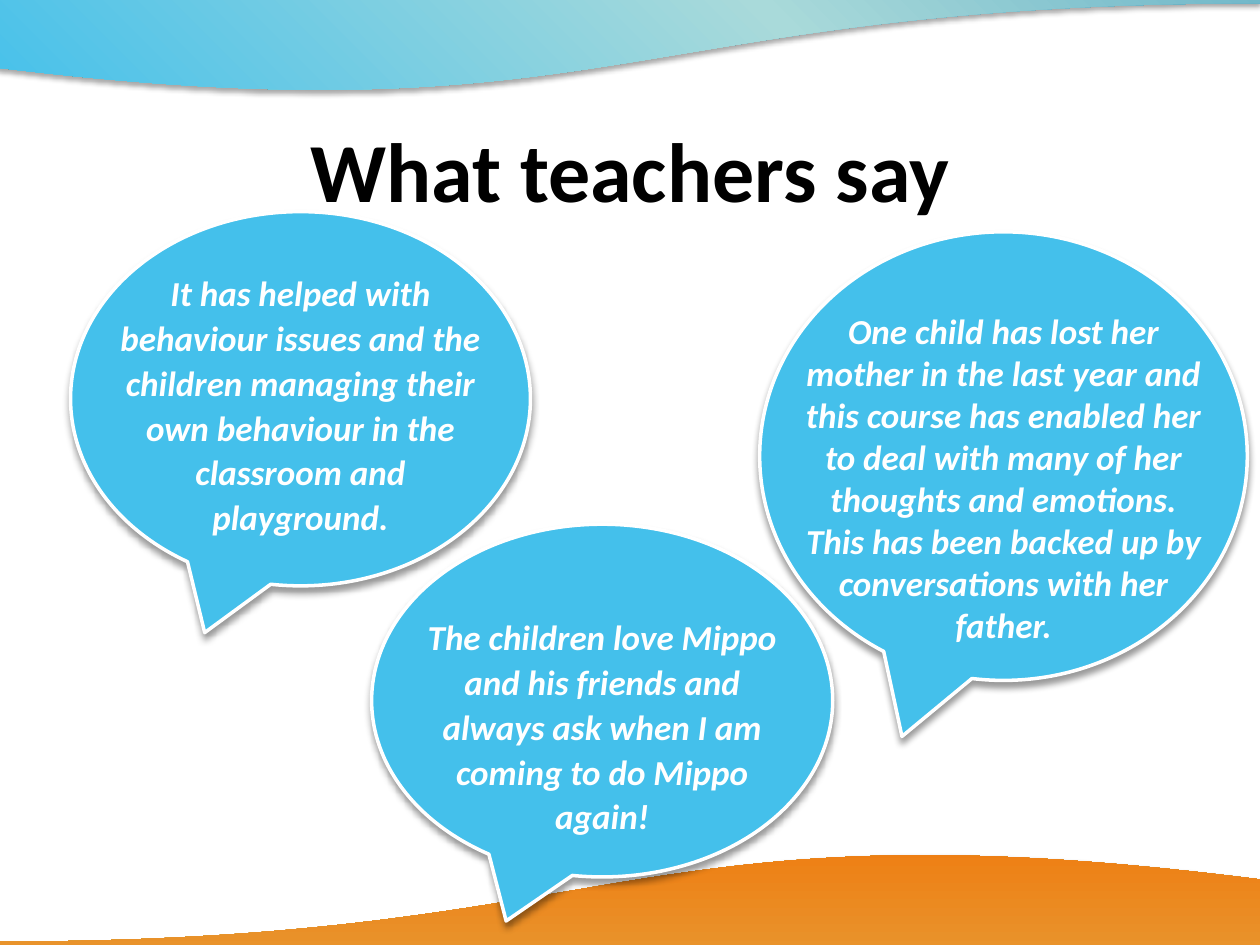
"""Build a slide of teacher quotes in speech bubbles between two waves."""
from pptx import Presentation
from pptx.dml.color import RGBColor
from pptx.enum.shapes import MSO_SHAPE
from pptx.enum.text import MSO_ANCHOR, PP_ALIGN
from pptx.oxml import parse_xml
from pptx.oxml.ns import nsdecls
from pptx.util import Inches, Pt

WIDTH, HEIGHT = Inches(10), Inches(7.5)

THEME = {
    "bubble": "44C0EB",
    "outline": "FFFFFF",
    "outline_width": 2,
    "title": {"name": "Calibri", "size": Pt(48), "bold": True},
    "quote": {"name": "Calibri", "size": Pt(20), "bold": True, "italic": True},
    "title_color": "000000",
    "quote_color": "FFFFFF",
    "wave_shadow": {"alpha": 35, "blur": 3.1, "dist": 1.8},
    "bubble_shadow": {"alpha": 40, "blur": 4, "dist": 3},
}

TITLE = {"text": "What teachers say", "box": (5, 11.6, 90, 12.53)}

WAVES = [
    {"box": (-2, -39.2, 102, 49.33), "angle": 135, "flip": False,
     "colors": ("499FBD", "A9DADA", "44C0EB")},
    {"box": (0, 89.87, 100.4, 49.33), "angle": 90, "flip": True,
     "colors": ("D66D08", "E1AF4C", "EE7F14")},
]

LOOSE = {"line_spacing": 1.07, "space_after": Pt(6)}
QUOTES = [
    {"box": (60.3, 24.53, 38.7, 47.47), "text_box": (34.1, 32.13, 37.2), "format": {},
     "text": "One child has lost her mother in the last year and this course has "
             "enabled her to deal with many of her thoughts and emotions. This has "
             "been backed up by conversations with her father."},
    {"box": (29.5, 55.47, 36.6, 37.33), "text_box": (31.7, 64.13, 25.2), "format": LOOSE,
     "text": "The children love Mippo and his friends and always ask when I am "
             "coming to do Mippo again!"},
    {"box": (5.6, 22.4, 36.5, 39.6), "text_box": (31.3, 27.73, 30), "format": LOOSE,
     "text": "It has helped with behaviour issues and the children managing their "
             "own behaviour in the classroom and playground."},
]


def place(box):
    """Turn percentages of the slide into lengths."""
    return [int(share * side / 100) for share, side in zip(box, (WIDTH, HEIGHT) * 2)]


def set_all(target, values):
    """Set every attribute named in a dict."""
    for name, value in values.items():
        setattr(target, name, value)


def add_shadow(sp, alpha, blur, dist):
    """Give a shape a soft shadow falling straight down."""
    sp.shadow.inherit = False
    sp._element.spPr.find("{*}effectLst").append(parse_xml(
        f'<a:outerShdw {nsdecls("a")} blurRad="{Pt(blur)}" dist="{Pt(dist)}" '
        f'dir="5400000" rotWithShape="0"><a:srgbClr val="000000">'
        f'<a:alpha val="{alpha * 1000}"/></a:srgbClr></a:outerShdw>'))


def add_wave(shapes, wave):
    """Add a wave with an evenly stepped gradient."""
    sp = shapes.add_shape(MSO_SHAPE.FLOWCHART_DOCUMENT, *place(wave["box"]))
    sp.line.fill.background()
    step = 100000 // (len(wave["colors"]) - 1)
    stops = "".join(f'<a:gs pos="{i * step}"><a:srgbClr val="{color}"/></a:gs>'
                    for i, color in enumerate(wave["colors"]))
    spPr = sp._element.spPr
    spPr.find("{*}ln").addprevious(parse_xml(
        f'<a:gradFill {nsdecls("a")} rotWithShape="1"><a:gsLst>{stops}</a:gsLst>'
        f'<a:lin ang="{wave["angle"] * 60000}" scaled="0"/></a:gradFill>'))
    if wave["flip"]:
        for side in ("flipH", "flipV"):
            spPr.find("{*}xfrm").set(side, "1")
    add_shadow(sp, **THEME["wave_shadow"])


def add_text(shapes, box, text, style, anchor, paragraph_format):
    """Add a centred text box in one of the theme's styles."""
    tf = shapes.add_textbox(*place(box)).text_frame
    set_all(tf, {"word_wrap": True, "vertical_anchor": anchor})
    p = tf.paragraphs[0]
    set_all(p, {"alignment": PP_ALIGN.CENTER, **paragraph_format})
    r = p.add_run()
    r.text = text
    set_all(r.font, THEME[style])
    r.font.color.rgb = RGBColor.from_string(THEME[f"{style}_color"])


def add_quote(shapes, quote):
    """Add a speech bubble grouped with its horizontally centred text."""
    group = shapes.add_group_shape().shapes
    sp = group.add_shape(MSO_SHAPE.OVAL_CALLOUT, *place(quote["box"]))
    sp.fill.solid()
    sp.fill.fore_color.rgb = RGBColor.from_string(THEME["bubble"])
    sp.line.color.rgb = RGBColor.from_string(THEME["outline"])
    sp.line.width = Pt(THEME["outline_width"])
    add_shadow(sp, **THEME["bubble_shadow"])
    left, _, bubble_width, _ = quote["box"]
    width, top, height = quote["text_box"]
    box = (left + (bubble_width - width) / 2, top, width, height)
    add_text(group, box, quote["text"], "quote", MSO_ANCHOR.TOP, quote["format"])


def main():
    """Assemble and save the slide."""
    prs = Presentation()
    set_all(prs, {"slide_width": WIDTH, "slide_height": HEIGHT})
    s = prs.slides.add_slide(prs.slide_layouts[6])
    for wave in WAVES:
        add_wave(s.shapes, wave)
    add_text(s.shapes, TITLE["box"], TITLE["text"], "title", MSO_ANCHOR.MIDDLE, {})
    for quote in QUOTES:
        add_quote(s.shapes, quote)
    prs.save("out.pptx")


if __name__ == "__main__":
    main()
